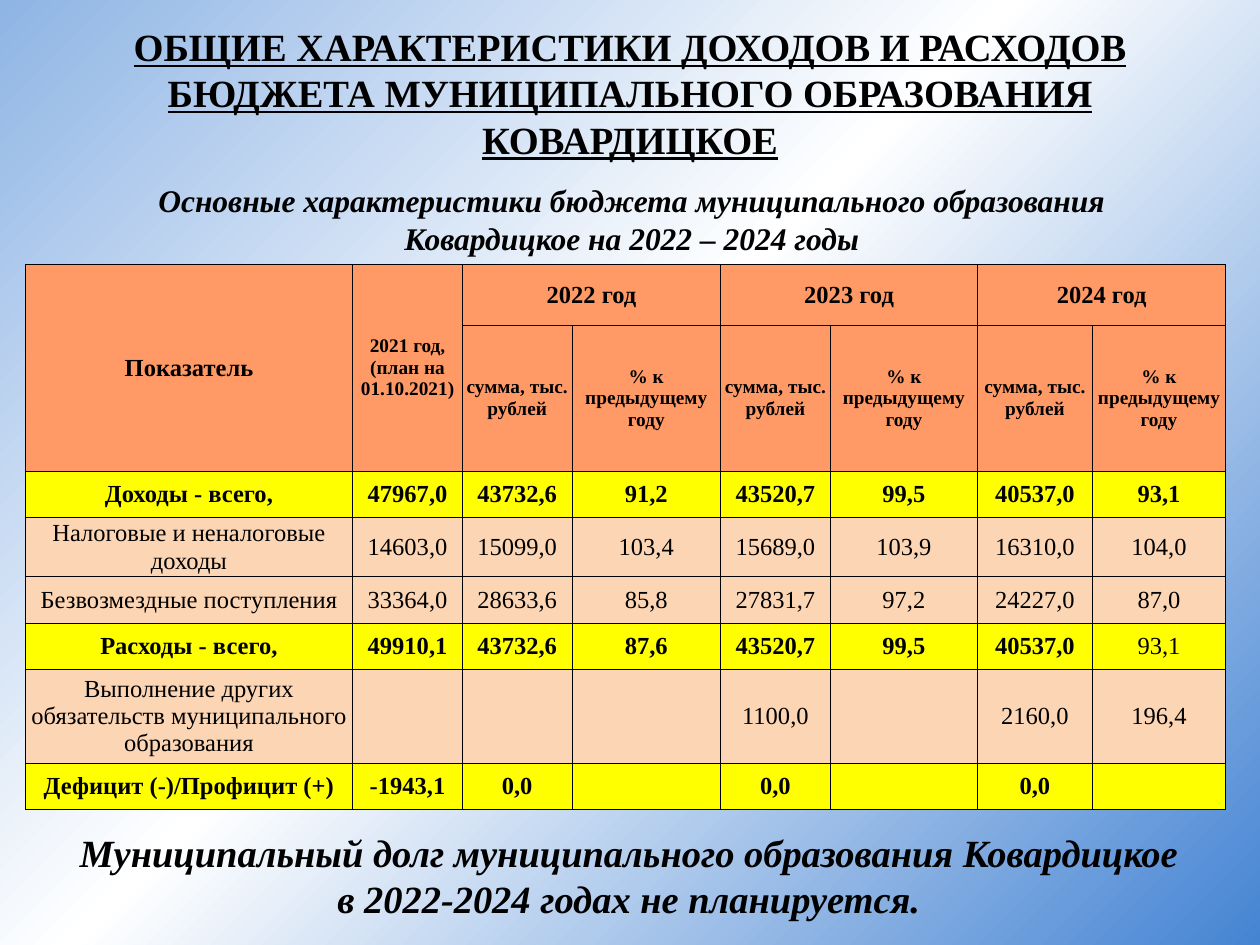
import dataclasses

import pptx
import pptx.dml.color
import pptx.enum.text
import pptx.oxml
import pptx.oxml.ns
import pptx.util

Inches = pptx.util.Inches
RGBColor = pptx.dml.color.RGBColor
Anchor = pptx.enum.text.MSO_ANCHOR

BLACK = RGBColor(0x00, 0x00, 0x00)
ORANGE = RGBColor(0xFF, 0x99, 0x66)
YELLOW = RGBColor(0xFF, 0xFF, 0x00)
PEACH = RGBColor(0xFC, 0xD5, 0xB4)
PALE_BLUE = RGBColor(0x8F, 0xB5, 0xE5)
DEEP_BLUE = RGBColor(0x45, 0x84, 0xD3)
WHITE = RGBColor(0xFF, 0xFF, 0xFF)
BACKDROP = [(0, PALE_BLUE), (0, DEEP_BLUE), (54, WHITE), (100, PALE_BLUE)]

FONT = "Times New Roman"
COLUMN_WIDTHS = [2.6, 0.87, 0.87, 1.18, 0.87, 1.17, 0.91, 1.06]
ROW_HEIGHTS = [0.48, 1.16, 0.37, 0.39, 0.37, 0.37, 0.74, 0.37]
YEARS = ["2022 год", "2023 год", "2024 год"]
MEASURES = ["сумма, тыс. рублей", "% к предыдущему году"]


@dataclasses.dataclass(frozen=True)
class BudgetLine:
    label: str
    values: list[str]
    total: bool = False
    plain_columns: tuple[int, ...] = ()


BUDGET = [
    BudgetLine("Доходы - всего,",
               ["47967,0", "43732,6", "91,2", "43520,7", "99,5", "40537,0", "93,1"], total=True),
    BudgetLine("Налоговые и неналоговые доходы",
               ["14603,0", "15099,0", "103,4", "15689,0", "103,9", "16310,0", "104,0"]),
    BudgetLine("Безвозмездные поступления",
               ["33364,0", "28633,6", "85,8", "27831,7", "97,2", "24227,0", "87,0"]),
    BudgetLine("Расходы - всего,",
               ["49910,1", "43732,6", "87,6", "43520,7", "99,5", "40537,0", "93,1"],
               total=True, plain_columns=(7,)),
    BudgetLine("Выполнение других обязательств муниципального образования",
               ["", "", "", "1100,0", "", "2160,0", "196,4"]),
    BudgetLine("Дефицит (-)/Профицит (+)",
               ["-1943,1", "0,0", "", "0,0", "", "0,0", ""], total=True),
]


def write(frame, text: str, *, size: float, bold: bool = True, italic: bool = False,
          underline: bool = False, margin: float = 0, indent: float = 0) -> None:
    frame.word_wrap = True
    for number, line in enumerate(text.split("\n")):
        paragraph = frame.add_paragraph() if number else frame.paragraphs[0]
        paragraph.alignment = pptx.enum.text.PP_ALIGN.CENTER
        if margin:
            properties = paragraph._p.get_or_add_pPr()
            properties.set("marL", str(Inches(margin)))
            properties.set("indent", str(Inches(indent)))
        if not line:
            continue
        run = paragraph.add_run()
        run.text = line
        run.font.name = FONT
        run.font.size = pptx.util.Pt(size)
        run.font.bold = bold
        run.font.italic = italic
        run.font.underline = underline
        run.font.color.rgb = BLACK


def paint_background(slide) -> None:
    slide.background.fill.gradient()
    gradient = slide._element.find(".//" + pptx.oxml.ns.qn("a:gradFill"))
    stops = "".join(f'<a:gs pos="{place * 1000}"><a:srgbClr val="{color}"/></a:gs>'
                    for place, color in BACKDROP)
    gradient.getparent().replace(gradient, pptx.oxml.parse_xml(
        f'<a:gradFill {pptx.oxml.ns.nsdecls("a")} rotWithShape="1"><a:gsLst>{stops}</a:gsLst>'
        '<a:path path="circle"><a:fillToRect l="100000" t="100000"/></a:path></a:gradFill>'))


def style_cell(cell, fill: RGBColor) -> None:
    cell.margin_left = cell.margin_right = cell.margin_top = cell.margin_bottom = 0
    cell.vertical_anchor = Anchor.MIDDLE
    for side in "LRTB":
        cell._tc.get_or_add_tcPr().append(pptx.oxml.parse_xml(
            f'<a:ln{side} {pptx.oxml.ns.nsdecls("a")} w="{pptx.util.Pt(0.5)}">'
            f'<a:solidFill><a:srgbClr val="{BLACK}"/></a:solidFill></a:ln{side}>'))
    cell.fill.solid()
    cell.fill.fore_color.rgb = fill


def add_budget_table(slide) -> None:
    table = slide.shapes.add_table(
        len(ROW_HEIGHTS), len(COLUMN_WIDTHS), Inches(0.2), Inches(2.1),
        Inches(sum(COLUMN_WIDTHS)), Inches(sum(ROW_HEIGHTS))).table
    table.first_row = table.horz_banding = False
    for column, width in zip(table.columns, COLUMN_WIDTHS):
        column.width = Inches(width)
    for row, height in zip(table.rows, ROW_HEIGHTS):
        row.height = Inches(height)

    fills = [ORANGE, ORANGE] + [YELLOW if line.total else PEACH for line in BUDGET]
    for row, fill in zip(table.rows, fills):
        for cell in row.cells:
            style_cell(cell, fill)

    for column, (heading, size) in enumerate([("Показатель", 14),
                                              ("2021 год, (план на 01.10.2021)", 11)]):
        table.cell(0, column).merge(table.cell(1, column))
        write(table.cell(0, column).text_frame, heading, size=size)
    for number, year in enumerate(YEARS):
        first = 2 + number * len(MEASURES)
        table.cell(0, first).merge(table.cell(0, first + 1))
        write(table.cell(0, first).text_frame, year, size=14)
        for offset, measure in enumerate(MEASURES):
            write(table.cell(1, first + offset).text_frame, measure, size=11)
    for row, line in enumerate(BUDGET, start=2):
        for column, text in enumerate([line.label, *line.values]):
            write(table.cell(row, column).text_frame, text, size=14,
                  bold=line.total and column not in line.plain_columns)


def main() -> None:
    deck = pptx.Presentation()
    deck.slide_width, deck.slide_height = Inches(10), Inches(7.5)
    slide = deck.slides.add_slide(deck.slide_layouts[5])
    paint_background(slide)

    title = slide.shapes.title
    title.left, title.top = Inches(0.12), Inches(0.05)
    title.width, title.height = Inches(9.76), Inches(1.37)
    title.text_frame.vertical_anchor = Anchor.MIDDLE
    write(title.text_frame, "ОБЩИЕ ХАРАКТЕРИСТИКИ ДОХОДОВ И РАСХОДОВ "
          "БЮДЖЕТА МУНИЦИПАЛЬНОГО ОБРАЗОВАНИЯ КОВАРДИЦКОЕ", size=22, underline=True)

    subtitle = slide.shapes.add_textbox(Inches(0.32), Inches(1.39), Inches(9.34), Inches(0.71))
    write(subtitle.text_frame, "Основные характеристики бюджета муниципального образования\n"
          "Ковардицкое на 2022 – 2024 годы", size=18, italic=True, margin=0.25, indent=-0.2)

    debt = slide.shapes.add_textbox(Inches(0.46), Inches(6.51), Inches(9.06), Inches(0.87))
    debt.text_frame.vertical_anchor = Anchor.MIDDLE
    write(debt.text_frame, "Муниципальный долг муниципального образования Ковардицкое "
          "в 2022-2024 годах не планируется.", size=22, italic=True)

    add_budget_table(slide)
    deck.save("out.pptx")


if __name__ == "__main__":
    main()
